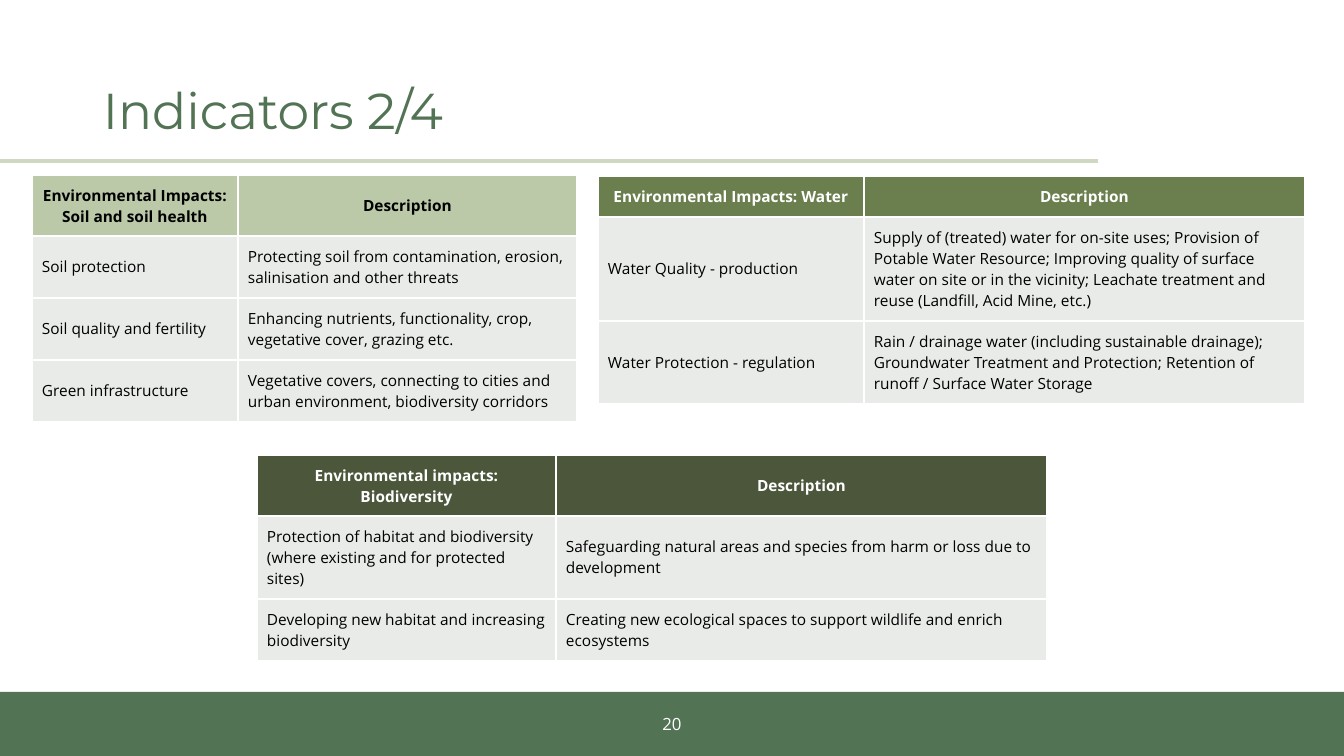
from lxml import etree
from pptx import Presentation
from pptx.dml.color import RGBColor
from pptx.enum import shapes, text
from pptx.oxml import ns
from pptx.util import Pt

PX = 914400 / 100.8
WIDTH, HEIGHT = 1344, 756
GREEN, RULE, BODY, BLACK, WHITE = "537355", "CFD9C1", "E9EBE9", "000000", "FFFFFF"
INSET = 10

TABLES = [
    {"left": 32, "top": 175, "columns": (206, 339), "rows": (61, 62, 62, 62),
     "fill": "BBC9A8", "color": BLACK, "cells": [
        ("Environmental Impacts:\nSoil and soil health", "Description"),
        ("Soil protection",
         "Protecting soil from contamination, erosion, salinisation and other threats"),
        ("Soil quality and fertility",
         "Enhancing nutrients, functionality, crop, vegetative cover, grazing etc."),
        ("Green infrastructure",
         "Vegetative covers, connecting to cities and urban environment, "
         "biodiversity corridors")]},
    {"left": 598, "top": 176, "columns": (266, 441), "rows": (41, 104, 83),
     "fill": "6B7F4E", "color": WHITE, "cells": [
        ("Environmental Impacts: Water", "Description"),
        ("Water Quality - production",
         "Supply of (treated) water for on-site uses; Provision of Potable Water Resource; "
         "Improving quality of surface water on site or in the vicinity; "
         "Leachate treatment and reuse (Landfill, Acid Mine, etc.)"),
        ("Water Protection - regulation",
         "Rain / drainage water (including sustainable drainage); Groundwater Treatment "
         "and Protection; Retention of runoff / Surface Water Storage")]},
    {"left": 257, "top": 455, "columns": (299, 491), "rows": (61, 83, 62),
     "fill": "4B563A", "color": WHITE, "cells": [
        ("Environmental impacts: Biodiversity", "Description"),
        ("Protection of habitat and biodiversity (where existing and for protected sites)",
         "Safeguarding natural areas and species from harm or loss due to development"),
        ("Developing new habitat and increasing biodiversity",
         "Creating new ecological spaces to support wildlife and enrich ecosystems")]},
]


def px(*lengths):
    return [round(length * PX) for length in lengths]


def rgb(code):
    return RGBColor.from_string(code)


def style(frame, font, size, color, align, bold=False):
    for para in frame.paragraphs:
        para.alignment = align
        para.font.name, para.font.size, para.font.bold = font, Pt(size), bold
        para.font.color.rgb = rgb(color)


def add_text(page, bounds, words, font, size, color, align):
    box = page.shapes.add_textbox(*px(*bounds))
    frame = box.text_frame
    frame.word_wrap = True
    frame.vertical_anchor = text.MSO_ANCHOR.MIDDLE
    frame.text = words
    style(frame, font, size, color, align)
    return frame


def add_borders(cell):
    properties = cell._tc.get_or_add_tcPr()
    for side in ("a:lnL", "a:lnR", "a:lnT", "a:lnB"):
        line = etree.SubElement(properties, ns.qn(side), w=str(Pt(1)))
        fill = etree.SubElement(line, ns.qn("a:solidFill"))
        etree.SubElement(fill, ns.qn("a:srgbClr"), val=WHITE)


def fill_cell(cell, words, fill, color, header):
    add_borders(cell)
    cell.fill.solid()
    cell.fill.fore_color.rgb = rgb(fill)
    cell.margin_left = cell.margin_right = cell.margin_top = cell.margin_bottom = px(INSET)[0]
    cell.vertical_anchor = text.MSO_ANCHOR.MIDDLE
    cell.text = words
    align = text.PP_ALIGN.CENTER if header else text.PP_ALIGN.LEFT
    style(cell.text_frame, "Open Sans", 11, color, align, header)


def add_grid(page, item):
    columns, rows = item["columns"], item["rows"]
    bounds = px(item["left"], item["top"], sum(columns), sum(rows))
    table = page.shapes.add_table(len(rows), len(columns), *bounds).table
    table.horz_banding = False
    for column, width in zip(table.columns, px(*columns)):
        column.width = width
    for row, height in zip(table.rows, px(*rows)):
        row.height = height
    for r, line in enumerate(item["cells"]):
        header = r == 0
        fill, color = (item["fill"], item["color"]) if header else (BODY, BLACK)
        for c, words in enumerate(line):
            fill_cell(table.cell(r, c), words, fill, color, header)


def main():
    deck = Presentation()
    deck.slide_width, deck.slide_height = px(WIDTH, HEIGHT)
    page = deck.slides.add_slide(deck.slide_layouts[6])

    footer = page.shapes.add_shape(shapes.MSO_SHAPE.RECTANGLE, *px(0, 692, WIDTH, 64))
    footer.shadow.inherit = False
    footer.fill.solid()
    footer.fill.fore_color.rgb = rgb(GREEN)
    footer.line.fill.background()
    add_text(page, (521, 704, 302, 40), "20", "Open Sans", 12, WHITE, text.PP_ALIGN.CENTER)

    rule = page.shapes.add_connector(shapes.MSO_CONNECTOR.STRAIGHT, *px(0, 161, 1098, 161))
    rule.line.color.rgb = rgb(RULE)
    rule.line.width = Pt(3)
    etree.SubElement(rule._element.spPr, ns.qn("a:effectLst"))

    for item in TABLES:
        add_grid(page, item)

    title = add_text(page, (93, 40, 1159, 146), "Indicators 2/4", "Montserrat", 36, GREEN,
                     text.PP_ALIGN.LEFT)
    title.paragraphs[0].line_spacing = 0.9
    deck.save("out.pptx")


if __name__ == "__main__":
    main()
